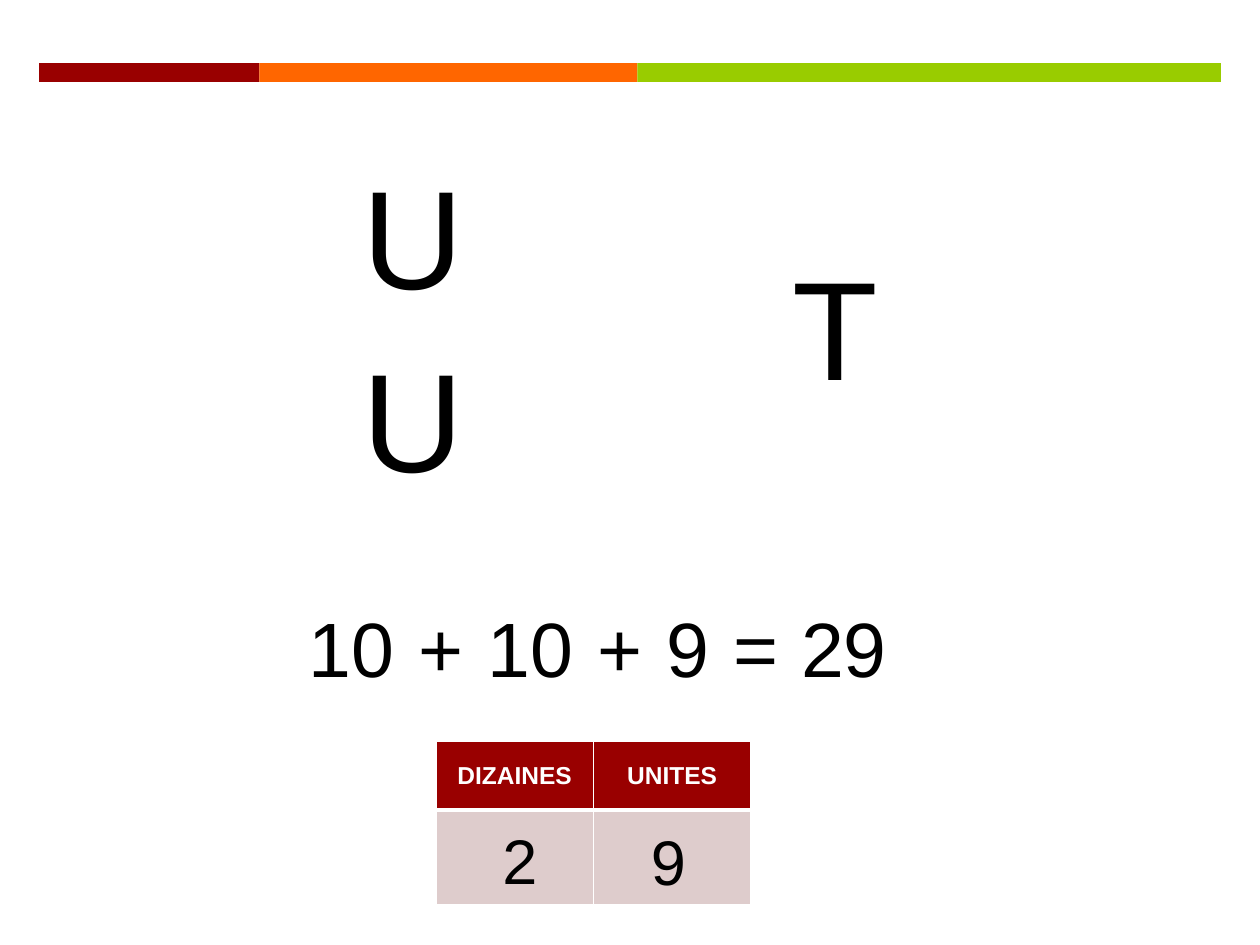
from lxml import etree
from pptx import Presentation
from pptx.dml.color import RGBColor
from pptx.enum.shapes import MSO_SHAPE
from pptx.enum.text import MSO_ANCHOR, MSO_AUTO_SIZE, PP_ALIGN
from pptx.oxml.ns import qn
from pptx.util import Inches, Pt

DARK_RED = RGBColor(0x99, 0x00, 0x00)
ORANGE = RGBColor(0xFF, 0x66, 0x00)
GREEN = RGBColor(0x99, 0xCC, 0x00)
PINK = RGBColor(0xDE, 0xCC, 0xCC)
WHITE = RGBColor(0xFF, 0xFF, 0xFF)
BLACK = RGBColor(0x00, 0x00, 0x00)
FONT = "Arial"


def format_text(p, size, color, align=PP_ALIGN.LEFT, bold=False):
    p.alignment = align
    for r in p.runs:
        r.font.name = FONT
        r.font.size = Pt(size)
        r.font.bold = bold
        r.font.color.rgb = color


def add_text(slide, text, left, top, width, height, size,
             align=PP_ALIGN.LEFT, wrap=True):
    box = slide.shapes.add_textbox(
        Inches(left), Inches(top), Inches(width), Inches(height))
    tf = box.text_frame
    tf.text = text
    tf.word_wrap = wrap
    tf.auto_size = MSO_AUTO_SIZE.SHAPE_TO_FIT_TEXT
    format_text(tf.paragraphs[0], size, BLACK, align)


def add_color_bar(slide, left, top, height):
    for width, color in ((1.75, DARK_RED), (3, ORANGE), (4.63, GREEN)):
        sp = slide.shapes.add_shape(
            MSO_SHAPE.RECTANGLE, Inches(left), Inches(top),
            Inches(width), Inches(height))
        sp.shadow.inherit = False
        sp.fill.solid()
        sp.fill.fore_color.rgb = color
        sp.line.fill.background()
        left += width


def add_letters(slide):
    for text, left, top, width in (("U", 2.78, 2.59, 1.93),
                                   ("U", 2.78, 1.14, 1.93),
                                   ("T", 6.19, 1.86, 2.64)):
        add_text(slide, text, left, top, width, 1.45, 80)


def add_sum(slide, top, height):
    terms = (("10", 2.35, 0.89), ("+", 3.22, 0.56), ("10", 3.77, 0.89),
             ("+", 4.64, 0.56), ("9", 5.19, 0.55), ("=", 5.72, 0.56),
             ("29", 6.26, 0.89))
    for text, left, width in terms:
        add_text(slide, text, left, top, width, height, 44, wrap=False)


def set_borders(cell, **widths):
    """Draw white borders; each keyword is a side (L, R, T, B) in points."""
    tcPr = cell._tc.get_or_add_tcPr()
    for i, side in enumerate("LRTB"):
        ln = etree.Element(qn(f"a:ln{side}"), w=str(Pt(widths.get(side, 1))))
        fill = etree.SubElement(ln, qn("a:solidFill"))
        etree.SubElement(fill, qn("a:srgbClr"), val=str(WHITE))
        tcPr.insert(i, ln)


def add_place_value_table(slide, left, top, width, height):
    table = slide.shapes.add_table(
        2, 2, Inches(left), Inches(top), Inches(width), Inches(height)).table
    table.rows[0].height = Inches(0.55)
    table.rows[1].height = Inches(height - 0.55)
    for col, heading in enumerate(("DIZAINES", "UNITES")):
        table.columns[col].width = Inches(width / 2)
        head, body = table.cell(0, col), table.cell(1, col)
        for cell, color in ((head, DARK_RED), (body, PINK)):
            cell.fill.solid()
            cell.fill.fore_color.rgb = color
        head.text = heading
        head.vertical_anchor = MSO_ANCHOR.MIDDLE
        format_text(head.text_frame.paragraphs[0], 14, WHITE,
                    PP_ALIGN.CENTER, bold=True)
        set_borders(head, B=3)
        set_borders(body, T=3)
    for digit, x, y in (("2", 3.62, 6.47), ("9", 4.8, 6.48)):
        add_text(slide, digit, x, y, 1.01, 0.71, 36, PP_ALIGN.CENTER)


def main():
    prs = Presentation()
    prs.slide_width, prs.slide_height = Inches(10), Inches(7.5)
    slide = prs.slides.add_slide(prs.slide_layouts[6])
    add_color_bar(slide, 0.31, 0.5, 0.15)
    add_letters(slide)
    add_sum(slide, 4.72, 0.84)
    add_place_value_table(slide, 3.46, 5.88, 2.5, 1.3)
    prs.save("out.pptx")


if __name__ == "__main__":
    main()
